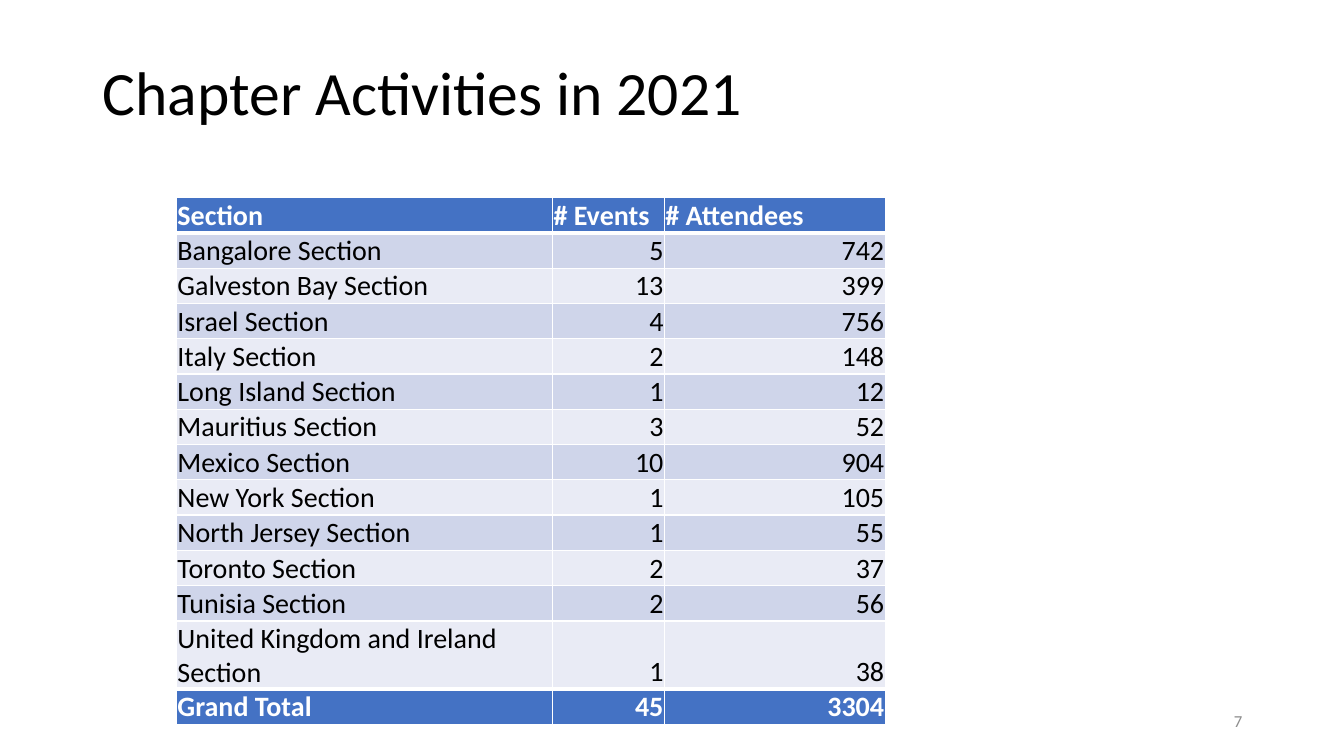
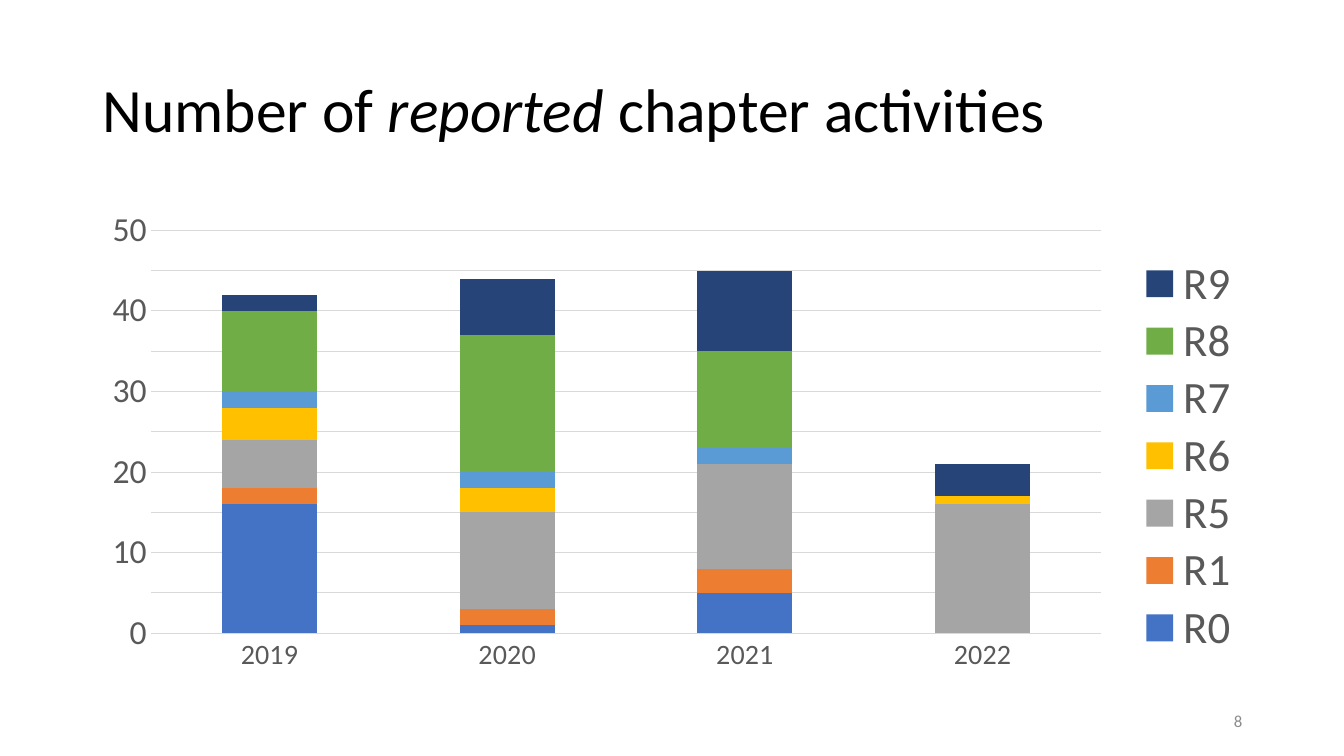
"""Build two slides on chapter activities: a table by section and a chart by year."""
from lxml.etree import SubElement
from pptx import Presentation
from pptx.chart.data import CategoryChartData
from pptx.dml.color import RGBColor
from pptx.enum.chart import XL_CHART_TYPE as ChartType, XL_LEGEND_POSITION as LegendPosition
from pptx.enum.chart import XL_TICK_MARK as TickMark
from pptx.enum.text import MSO_ANCHOR as Anchor, PP_ALIGN as Align
from pptx.oxml import parse_xml
from pptx.oxml.ns import nsdecls, qn
from pptx.util import Inches, Pt

FONT = "Calibri"
COLORS = {
    "text": "000000",
    "white": "FFFFFF",
    "page_number": "8C8C8C",
    "header": "4472C4",
    "band_dark": "CFD5EA",
    "band_light": "E9EBF5",
    "chart_text": "595959",
    "grid": "D9D9D9",
}
HEADINGS = ("Section", "# Events", "# Attendees")
SECTIONS = [
    ("Bangalore Section", 5, 742),
    ("Galveston Bay Section", 13, 399),
    ("Israel Section", 4, 756),
    ("Italy Section", 2, 148),
    ("Long Island Section", 1, 12),
    ("Mauritius Section", 3, 52),
    ("Mexico Section", 10, 904),
    ("New York Section", 1, 105),
    ("North Jersey Section", 1, 55),
    ("Toronto Section", 2, 37),
    ("Tunisia Section", 2, 56),
    ("United Kingdom and Ireland Section", 1, 38),
]
YEARS = ("2019", "2020", "2021", "2022")
REGIONS = [
    ("R0", "4472C4", (16, 1, 5, None)),
    ("R1", "ED7D31", (2, 2, 3, None)),
    ("R5", "A5A5A5", (6, 12, 13, 16)),
    ("R6", "FFC000", (4, 3, None, 1)),
    ("R7", "5B9BD5", (2, 2, 2, None)),
    ("R8", "70AD47", (10, 17, 12, None)),
    ("R9", "264478", (2, 7, 10, 4)),
]


def rgb(name):
    return RGBColor.from_string(COLORS[name])


def style_font(font, size, color, bold=False, italic=False):
    font.name = FONT
    font.size = Pt(size)
    font.color.rgb = rgb(color)
    font.bold = bold
    font.italic = italic


def add_text_box(page, left, top, width, height, anchor):
    box = page.shapes.add_textbox(Inches(left), Inches(top), Inches(width), Inches(height))
    box.text_frame.word_wrap = True
    box.text_frame.vertical_anchor = anchor
    return box.text_frame.paragraphs[0]


def add_page(deck, number, title_spans, title_top, title_height):
    page = deck.slides.add_slide(deck.slide_layouts[6])
    title = add_text_box(page, 0.92, title_top, 11.5, title_height, Anchor.TOP)
    title.line_spacing = 0.9
    for text, italic in title_spans:
        span = title.add_run()
        span.text = text
        style_font(span.font, 44, "text", italic=italic)
    footer = add_text_box(page, 9.42, 6.95, 3, 0.4, Anchor.MIDDLE)
    footer.text = str(number)
    footer.alignment = Align.RIGHT
    style_font(footer.runs[0].font, 12, "page_number")
    return page


def set_borders(cell, top, bottom):
    properties = cell._tc.get_or_add_tcPr()
    for side, points in (("L", 1), ("R", 1), ("T", top), ("B", bottom)):
        properties.append(parse_xml(
            f'<a:ln{side} {nsdecls("a")} w="{Pt(points)}"><a:solidFill>'
            f'<a:srgbClr val="{COLORS["white"]}"/></a:solidFill></a:ln{side}>'
        ))


def fill_cell(cell, text, fill, color, bold, align):
    cell.margin_left = cell.margin_right = cell.margin_top = Inches(0.01)
    cell.margin_bottom = 0
    cell.vertical_anchor = Anchor.BOTTOM
    cell.fill.solid()
    cell.fill.fore_color.rgb = rgb(fill)
    para = cell.text_frame.paragraphs[0]
    para.text = text
    para.alignment = align
    style_font(para.runs[0].font, 20, color, bold)


def add_section_table(page):
    totals = ("Grand Total", *(sum(row[column] for row in SECTIONS) for column in (1, 2)))
    rows = [HEADINGS, *SECTIONS, totals]
    last = len(rows) - 1
    widths = (3.73, 1.11, 2.19)
    row_height = 0.35
    table = page.shapes.add_table(
        len(rows), len(widths), Inches(1.75), Inches(1.96),
        Inches(sum(widths)), Inches(row_height * len(rows)),
    ).table
    for column, width in zip(table.columns, widths):
        column.width = Inches(width)
    for index, values in enumerate(rows):
        table.rows[index].height = Inches(row_height)
        strong = index in (0, last)
        fill = "header" if strong else "band_dark" if index % 2 else "band_light"
        for column, value in enumerate(values):
            cell = table.cell(index, column)
            set_borders(cell, 3 if index in (1, last) else 1, 3 if index in (0, last - 1) else 1)
            align = Align.RIGHT if isinstance(value, int) else Align.LEFT
            fill_cell(cell, str(value), fill, "white" if strong else "text", strong, align)


def place(parent, x, y, width, height, inner=False):
    for old in parent.findall(qn("c:layout")):
        parent.remove(old)
    layout = parse_xml(f'<c:layout {nsdecls("c")}><c:manualLayout/></c:layout>')
    manual = layout[0]
    settings = [("layoutTarget", "inner")] if inner else []
    settings += [("xMode", "edge"), ("yMode", "edge")]
    settings += [("x", x), ("y", y), ("w", width), ("h", height)]
    for tag, value in settings:
        SubElement(manual, qn(f"c:{tag}")).set("val", str(value))
    parent.insert(0 if inner else 1, layout)


def style_axis(axis, size):
    axis.major_tick_mark = axis.minor_tick_mark = TickMark.NONE
    style_font(axis.tick_labels.font, size, "chart_text")


def style_line(line):
    line.color.rgb = rgb("grid")
    line.width = Pt(0.75)


def add_activity_chart(page):
    data = CategoryChartData()
    data.categories = YEARS
    for name, _, values in REGIONS:
        data.add_series(name, values)
    chart = page.shapes.add_chart(
        ChartType.COLUMN_STACKED, Inches(0.92), Inches(2), Inches(11.5), Inches(4.76), data
    ).chart
    chart.has_title = False
    style_font(chart.font, 10, "text")

    plot = chart.plots[0]
    plot.gap_width = 150
    plot.overlap = 100
    plot.vary_by_categories = False
    for series, (_, color, _) in zip(plot.series, REGIONS):
        series.format.fill.solid()
        series.format.fill.fore_color.rgb = RGBColor.from_string(color)

    years, counts = chart.category_axis, chart.value_axis
    style_axis(years, 20)
    style_line(years.format.line)
    style_axis(counts, 24)
    counts.format.line.fill.background()
    counts.minimum_scale, counts.maximum_scale, counts.major_unit = 0, 50, 5
    counts.has_major_gridlines = True
    style_line(counts.major_gridlines.format.line)

    chart.has_legend = True
    legend = chart.legend
    legend.position = LegendPosition.RIGHT
    legend.include_in_layout = False
    style_font(legend.font, 32, "chart_text")
    place(legend._element, 0.9, 0.11, 0.09, 0.84)
    place(chart._chartSpace.chart.plotArea, 0.05, 0.06, 0.82, 0.84, inner=True)


def main():
    deck = Presentation()
    deck.slide_width, deck.slide_height = Inches(13.33), Inches(7.5)
    table_page = add_page(deck, 7, [("Chapter Activities in 2021", False)], 0.57, 1.28)
    add_section_table(table_page)
    title = [("Number of ", False), ("reported ", True), ("chapter activities", False)]
    chart_page = add_page(deck, 8, title, 0.74, 1.1)
    add_activity_chart(chart_page)
    deck.save("out.pptx")


if __name__ == "__main__":
    main()
